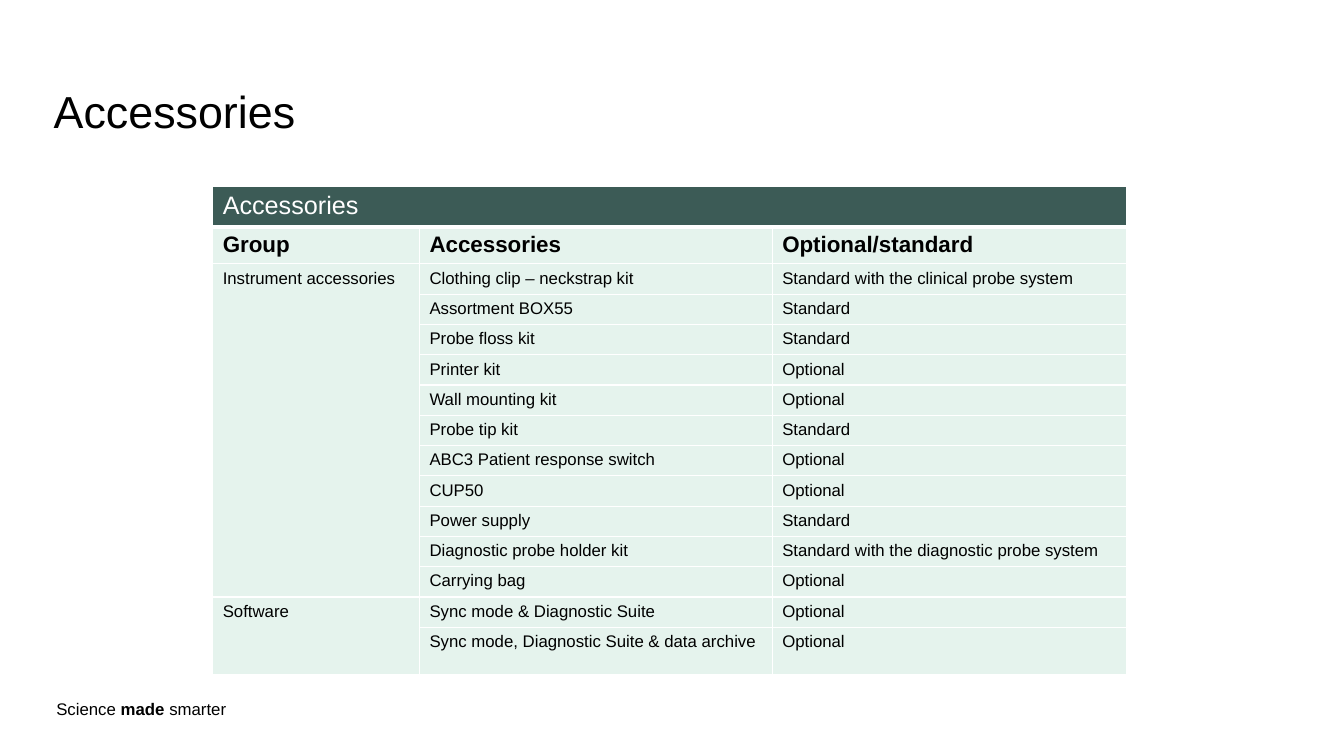
import pptx
import pptx.dml.color
import pptx.enum.text
import pptx.oxml
import pptx.oxml.ns
import pptx.util

Cm = pptx.util.Cm
RGBColor = pptx.dml.color.RGBColor
BLACK = RGBColor(0x00, 0x00, 0x00)
WHITE = RGBColor(0xFF, 0xFF, 0xFF)
GREEN = RGBColor(0x3C, 0x5B, 0x56)
MINT = RGBColor(0xE5, 0xF3, 0xED)


def write(para, text, size=12, bold=False, color=BLACK):
    run = para.add_run()
    run.text = text
    run.font.name = "Arial"
    run.font.size = pptx.util.Pt(size)
    run.font.bold = bold
    run.font.color.rgb = color


def edge(cell, side, width):
    line = pptx.oxml.parse_xml(
        f'<a:{side} {pptx.oxml.ns.nsdecls("a")} w="{pptx.util.Pt(width)}">'
        f'<a:solidFill><a:srgbClr val="{WHITE}"/></a:solidFill></a:{side}>'
    )
    cell._tc.get_or_add_tcPr().append(line)


deck = pptx.Presentation()
deck.slide_width = Cm(33.87)
deck.slide_height = Cm(19.05)
slide = deck.slides.add_slide(deck.slide_layouts[5])

title = slide.shapes.title
title.left, title.top = Cm(1.1), Cm(1.02)
title.width, title.height = Cm(29.2), Cm(3.68)
title.text_frame.vertical_anchor = pptx.enum.text.MSO_ANCHOR.MIDDLE
para = title.text_frame.paragraphs[0]
para.alignment = pptx.enum.text.PP_ALIGN.LEFT
para.line_spacing = 0.9
write(para, "Accessories", size=32)

motto = slide.shapes.add_textbox(Cm(1.17), Cm(17.55), Cm(6.83), Cm(1.5))
motto.text_frame.word_wrap = True
para = motto.text_frame.paragraphs[0]
para.line_spacing = 0.9
write(para, "Science ")
write(para, "made ", bold=True)
write(para, "smarter")

rows = [
    ("Accessories", "", ""),
    ("Group", "Accessories", "Optional/standard"),
    ("Instrument accessories", "Clothing clip – neckstrap kit", "Standard with the clinical probe system"),
    ("", "Assortment BOX55", "Standard"),
    ("", "Probe floss kit", "Standard"),
    ("", "Printer kit", "Optional"),
    ("", "Wall mounting kit", "Optional"),
    ("", "Probe tip kit", "Standard"),
    ("", "ABC3 Patient response switch", "Optional"),
    ("", "CUP50", "Optional"),
    ("", "Power supply", "Standard"),
    ("", "Diagnostic probe holder kit", "Standard with the diagnostic probe system"),
    ("", "Carrying bag", "Optional"),
    ("Software", "Sync mode & Diagnostic Suite", "Optional"),
    ("", "Sync mode, Diagnostic Suite & data archive", "Optional"),
]
widths = [5.21, 8.89, 8.92]
heights = [0.94, 0.89] + [0.73] * 12 + [1.2]
looks = [dict(size=18, color=WHITE), dict(size=16, bold=True)]

table = slide.shapes.add_table(
    len(rows), len(widths), Cm(5.36), Cm(4.7), Cm(sum(widths)), Cm(sum(heights))
).table
for col, width in zip(table.columns, widths):
    col.width = Cm(width)
for row, height in zip(table.rows, heights):
    row.height = Cm(height)

for r, row in enumerate(rows):
    look = looks[r] if r < len(looks) else {}
    for c, text in enumerate(row):
        cell = table.cell(r, c)
        for side in ("lnL", "lnR", "lnT", "lnB"):
            edge(cell, side, 3 if r == 0 and side == "lnB" else 1)
        cell.fill.solid()
        cell.fill.fore_color.rgb = MINT if r else GREEN
        if text:
            write(cell.text_frame.paragraphs[0], text, **look)

for start, end in [((0, 0), (0, 2)), ((2, 0), (12, 0)), ((13, 0), (14, 0))]:
    table.cell(*start).merge(table.cell(*end))

deck.save("out.pptx")
